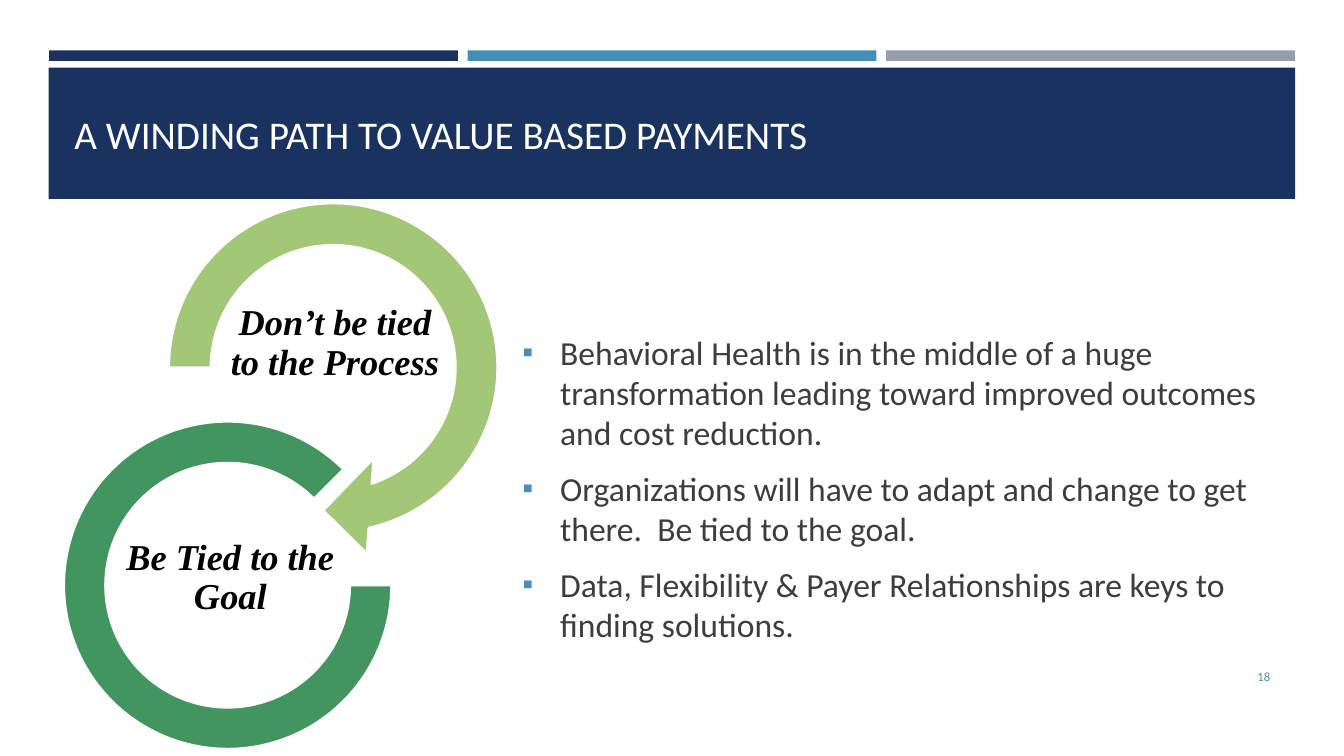
from lxml.etree import SubElement
from pptx import Presentation
from pptx.dml.color import RGBColor
from pptx.enum.shapes import MSO_SHAPE
from pptx.enum.text import MSO_ANCHOR, MSO_AUTO_SIZE, PP_ALIGN
from pptx.oxml.ns import qn
from pptx.util import Pt

NAVY, BLUE, GREY = "1A3260", "4590B8", "969FA7"
LIGHT_GREEN, GREEN = "A2C777", "42955F"
WHITE, BLACK, CHARCOAL = "FFFFFF", "000000", "3D3D3D"

POINTS = [
    "Behavioral Health is in the middle of a huge transformation leading toward improved outcomes and cost reduction.",
    "Organizations will have to adapt and change to get there.  Be tied to the goal.",
    "Data, Flexibility & Payer Relationships are keys to finding solutions.",
]


def color(hex_value):
    return RGBColor.from_string(hex_value)


def place(shape, left, top, width, height):
    shape.left, shape.top = Pt(left), Pt(top)
    shape.width, shape.height = Pt(width), Pt(height)


def add_figure(slide, kind, box, fill, outline=None, adjustments=()):
    figure = slide.shapes.add_shape(kind, *map(Pt, box))
    figure.shadow.inherit = False
    figure.fill.solid()
    figure.fill.fore_color.rgb = color(fill)
    if outline:
        figure.line.color.rgb = color(outline)
        figure.line.width = Pt(1.75)
    else:
        figure.line.fill.background()
    for index, value in enumerate(adjustments):
        figure.adjustments[index] = value


def add_text_area(slide, box, inset=None):
    frame = slide.shapes.add_textbox(*map(Pt, box)).text_frame
    frame.word_wrap = True
    frame.vertical_anchor = MSO_ANCHOR.MIDDLE
    if inset is not None:
        frame.margin_left = frame.margin_right = Pt(inset)
        frame.margin_top = frame.margin_bottom = Pt(inset)
    return frame


def write(paragraph, words, size, ink, align=PP_ALIGN.LEFT, font="Calibri", emphasis=False):
    paragraph.alignment = align
    run = paragraph.add_run()
    run.text = words
    run.font.name = font
    run.font.size = Pt(size)
    run.font.color.rgb = color(ink)
    run.font.bold = run.font.italic = emphasis


def add_bullet(paragraph):
    properties = paragraph._p.get_or_add_pPr()
    properties.set("marL", str(Pt(27)))
    properties.set("indent", str(Pt(-27)))
    tint = SubElement(properties, qn("a:buClr"))
    SubElement(tint, qn("a:srgbClr"), val=BLUE)
    SubElement(properties, qn("a:buSzPct"), val="92000")
    SubElement(properties, qn("a:buFont"), typeface="Arial")
    SubElement(properties, qn("a:buChar"), char="▪")


def add_header(slide, heading):
    for column, fill in enumerate((NAVY, BLUE, GREY)):
        add_figure(slide, MSO_SHAPE.RECTANGLE, (35 + 299 * column, 36, 292, 7.6), fill)
    add_figure(slide, MSO_SHAPE.RECTANGLE, (34.7, 48.3, 890.4, 93.8), NAVY)

    title = slide.shapes.title
    place(title, 46, 55.4, 868, 80)
    title.element.getparent().append(title.element)
    title.text_frame.auto_size = MSO_AUTO_SIZE.NONE
    title.text_frame.vertical_anchor = MSO_ANCHOR.MIDDLE
    write(title.text_frame.paragraphs[0], heading, 28, WHITE)


def add_ring_label(slide, left, top, words):
    frame = add_text_area(slide, (left, top, 152, 76), inset=1.3)
    label = frame.paragraphs[0]
    label.line_spacing = 0.9
    write(label, words, 26, BLACK, PP_ALIGN.CENTER, "Times New Roman", True)


def add_points(slide, points):
    frame = add_text_area(slide, (366, 231, 542, 235))
    for index, words in enumerate(points):
        paragraph = frame.add_paragraph() if index else frame.paragraphs[0]
        paragraph.space_before = Pt(4.8)
        paragraph.space_after = Pt(6)
        write(paragraph, words, 24, CHARCOAL)
        add_bullet(paragraph)


def main():
    deck = Presentation()
    deck.slide_width, deck.slide_height = Pt(960), Pt(540)
    slide = deck.slides.add_slide(deck.slide_layouts[5])

    add_header(slide, "A WINDING PATH TO VALUE BASED PAYMENTS")

    page = add_text_area(slide, (831.6, 468.7, 82.8, 28.8))
    write(page.paragraphs[0], "18", 9, BLUE, PP_ALIGN.RIGHT)

    add_figure(slide, MSO_SHAPE.CIRCULAR_ARROW, (101.5, 126, 273, 273), LIGHT_GREEN,
               WHITE, (0.11, 11.42, 45, 108, 0.125))
    add_ring_label(slide, 163.4, 207.4, "Don’t be tied to the Process")
    add_figure(slide, MSO_SHAPE.BLOCK_ARC, (45.6, 301, 234, 234), GREEN,
               WHITE, (0, 189, 0.127))
    add_ring_label(slide, 88.6, 375.1, "Be Tied to the Goal")

    add_points(slide, POINTS)
    deck.save("out.pptx")


if __name__ == "__main__":
    main()
